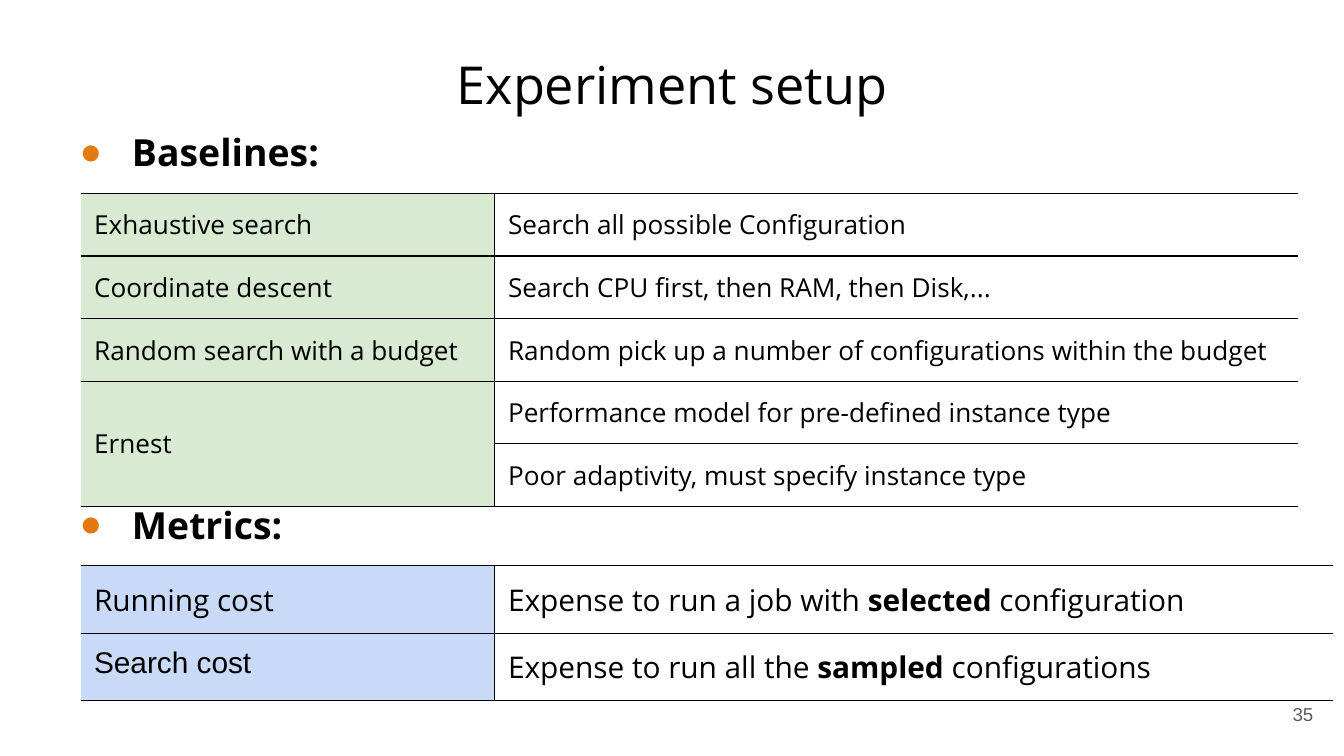
from dataclasses import dataclass

from lxml.etree import SubElement
from pptx import Presentation
from pptx.dml.color import RGBColor
from pptx.enum.shapes import MSO_SHAPE
from pptx.enum.text import MSO_ANCHOR, MSO_AUTO_SIZE, PP_ALIGN
from pptx.oxml.ns import qn
from pptx.util import Inches, Pt


@dataclass(frozen=True)
class Theme:
    font: str = "Open Sans"
    plain_font: str = "Arial"
    ink: str = "000000"
    muted: str = "595959"
    accent: str = "E47911"
    green: str = "D9EAD3"
    blue: str = "C9DAF8"
    title_size: int = 28
    heading_size: int = 20
    baseline_size: int = 14
    metric_size: int = 16
    number_size: int = 10
    border: float = 0.75


THEME = Theme()

# Content: a detail is a list of (text, bold) runs; a None label continues the one above
TITLE = "Experiment setup"
SLIDE_NUMBER = "35"
BASELINES = [
    ("Exhaustive search", [("Search all possible Configuration", False)]),
    ("Coordinate descent", [("Search CPU first, then RAM, then Disk,...", False)]),
    ("Random search with a budget",
     [("Random pick up a number of configurations within the budget", False)]),
    ("Ernest", [("Performance model for pre-defined instance type", False)]),
    (None, [("Poor adaptivity, must specify instance type", False)]),
]
METRICS = [
    ("Running cost", [("Expense to run a job with ", False), ("selected", True),
                      (" configuration", False)]),
    ("Search cost", [("Expense to run all the ", False), ("sampled", True),
                     (" configurations", False)]),
]
PLAIN_LABELS = {"Search cost"}

# Layout in inches, on a 16:9 slide
WIDTH = 10
HEIGHT = WIDTH * 9 / 16
MARGIN = 0.34
TABLE_LEFT, LABEL_WIDTH = 0.6, 3.08
HEADING_WIDTH, HEADING_HEIGHT = 9.06, 0.9
SECTIONS = [
    dict(heading="Baselines:", heading_top=0.68, rows=BASELINES, table_top=1.44,
         detail_width=5.98, row_height=0.46, fill=THEME.green, size=THEME.baseline_size),
    dict(heading="Metrics:", heading_top=3.45, rows=METRICS, table_top=4.21,
         detail_width=6.24, row_height=0.5, fill=THEME.blue, size=THEME.metric_size),
]


def style_font(font, size, color=THEME.ink, name=THEME.font, bold=False):
    font.size, font.name, font.bold = Pt(size), name, bold
    font.color.rgb = RGBColor.from_string(color)


def set_frame(text_frame, anchor):
    text_frame.word_wrap = True
    text_frame.auto_size = MSO_AUTO_SIZE.NONE
    text_frame.vertical_anchor = anchor
    text_frame.margin_left = text_frame.margin_right = Inches(0.1)
    text_frame.margin_top = text_frame.margin_bottom = Inches(0.1)


def add_heading(slide, text, top):
    shape = slide.shapes.add_shape(
        MSO_SHAPE.ROUNDED_RECTANGLE, Inches(MARGIN), Inches(top),
        Inches(HEADING_WIDTH), Inches(HEADING_HEIGHT))
    shape.shadow.inherit = False
    shape.fill.background()
    shape.line.fill.background()
    set_frame(shape.text_frame, MSO_ANCHOR.MIDDLE)
    paragraph = shape.text_frame.paragraphs[0]
    paragraph.text = text
    paragraph.alignment = PP_ALIGN.LEFT
    # Hanging bullet
    properties = paragraph._p.get_or_add_pPr()
    properties.set("marL", str(Inches(0.5)))
    properties.set("indent", str(Inches(-0.39)))
    bullet_color = SubElement(properties, qn("a:buClr"))
    SubElement(bullet_color, qn("a:srgbClr"), val=THEME.accent)
    SubElement(properties, qn("a:buFont"), typeface=THEME.plain_font)
    SubElement(properties, qn("a:buChar"), char="●")
    style_font(paragraph.runs[0].font, THEME.heading_size, bold=True)


def set_borders(cell, sides):
    properties = cell._tc.get_or_add_tcPr()
    for side in "LRTB":
        line = SubElement(properties, qn(f"a:ln{side}"), w=str(Pt(THEME.border)))
        if side in sides:
            fill = SubElement(line, qn("a:solidFill"))
            SubElement(fill, qn("a:srgbClr"), val=THEME.ink)
        else:
            SubElement(line, qn("a:noFill"))


def fill_cell(cell, runs, size, name=THEME.font):
    cell.margin_left = cell.margin_right = Inches(0.1)
    cell.margin_top = cell.margin_bottom = Inches(0.1)
    paragraph = cell.text_frame.paragraphs[0]
    for text, bold in runs:
        run = paragraph.add_run()
        run.text = text
        style_font(run.font, size, name=name, bold=bold)


def add_section_table(slide, section):
    rows, size = section["rows"], section["size"]
    widths = [LABEL_WIDTH, section["detail_width"]]
    table = slide.shapes.add_table(
        len(rows), len(widths), Inches(TABLE_LEFT), Inches(section["table_top"]),
        Inches(sum(widths)), Inches(section["row_height"] * len(rows))).table
    table.first_row = table.horz_banding = False
    for column, width in zip(table.columns, widths):
        column.width = Inches(width)
    for index, (label, detail) in enumerate(rows):
        table.rows[index].height = Inches(section["row_height"])
        label_cell, detail_cell = table.cell(index, 0), table.cell(index, 1)
        set_borders(label_cell, "TRB")
        set_borders(detail_cell, "LTB")
        label_cell.fill.solid()
        label_cell.fill.fore_color.rgb = RGBColor.from_string(section["fill"])
        detail_cell.fill.background()
        if label is None:
            owner = table.cell(index - 1, 0)
            owner.merge(label_cell)
            owner.vertical_anchor = MSO_ANCHOR.MIDDLE
        else:
            name = THEME.plain_font if label in PLAIN_LABELS else THEME.font
            fill_cell(label_cell, [(label, False)], size, name)
        fill_cell(detail_cell, detail, size)


def main():
    presentation = Presentation()
    presentation.slide_width, presentation.slide_height = Inches(WIDTH), Inches(HEIGHT)
    slide = presentation.slides.add_slide(presentation.slide_layouts[5])

    # Title
    title = slide.shapes.title
    title.left, title.top = Inches(MARGIN), Inches(0.29)
    title.width, title.height = Inches(WIDTH - 2 * MARGIN), Inches(0.63)
    title.text_frame.text = TITLE
    set_frame(title.text_frame, MSO_ANCHOR.TOP)
    paragraph = title.text_frame.paragraphs[0]
    paragraph.alignment = PP_ALIGN.CENTER
    style_font(paragraph.runs[0].font, THEME.title_size)

    # Headed tables
    for section in SECTIONS:
        add_section_table(slide, section)
        add_heading(slide, section["heading"], section["heading_top"])

    # Slide number
    number = slide.shapes.add_textbox(Inches(9.27), Inches(5.1), Inches(0.6), Inches(0.43))
    set_frame(number.text_frame, MSO_ANCHOR.MIDDLE)
    paragraph = number.text_frame.paragraphs[0]
    paragraph.text = SLIDE_NUMBER
    paragraph.alignment = PP_ALIGN.RIGHT
    style_font(paragraph.runs[0].font, THEME.number_size, THEME.muted, THEME.plain_font)

    presentation.save("out.pptx")


if __name__ == "__main__":
    main()
